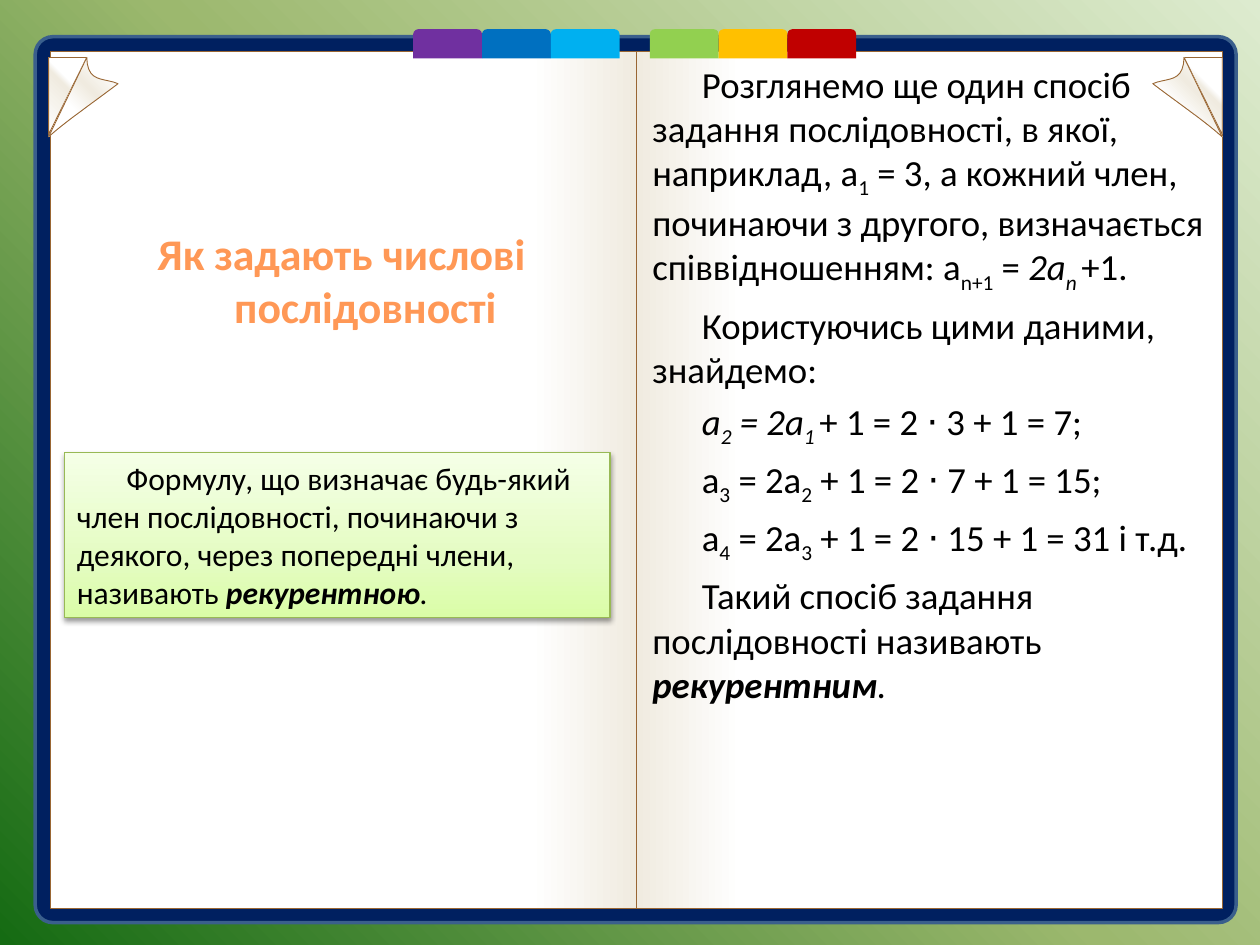
from lxml import etree
from pptx import Presentation
from pptx.dml.color import RGBColor
from pptx.enum.shapes import MSO_SHAPE
from pptx.enum.text import MSO_ANCHOR, PP_ALIGN
from pptx.oxml.ns import qn
from pptx.util import Cm, Pt

RECTANGLE = MSO_SHAPE.RECTANGLE
ROUNDED = MSO_SHAPE.ROUNDED_RECTANGLE
TAB = MSO_SHAPE.ROUND_2_SAME_RECTANGLE
TOP, MIDDLE = MSO_ANCHOR.TOP, MSO_ANCHOR.MIDDLE
LEFT, CENTER = PP_ALIGN.LEFT, PP_ALIGN.CENTER

COLORS = {
    "cover": "002060", "cover_edge": "3A5F8C", "paper": "FFFFFF",
    "paper_shade": "F0EBE0", "paper_edge": "996633", "text": "000000",
    "rule_edge": "98B955", "shadow": "000000",
}
TAB_COLORS = [["7030A0", "0070C0", "00B0F0"], ["92D050", "FFC000", "C00000"]]
PAPER, SHADE = COLORS["paper"], COLORS["paper_shade"]
BACKGROUND = [(0, "DDEBCF"), (50, "9CB86E"), (100, "156B13")]
PAGE_FILL = [(0, PAPER), (82, PAPER), (100, SHADE)]
UNDERSIDE_FILL = [(0, PAPER), (57, SHADE), (65, PAPER)]
CURL_FILL = [(12, PAPER), (40, SHADE), (65, PAPER)]
RULE_FILL = [(0, "DAFDA7"), (35, "E4FCC2"), (100, "F5FFE7")]
TITLE_FILL = [(0, "9D4700"), (78, "FF9856"), (100, "FFF5F1")]

SUB, ITALIC, ITALIC_SUB, STRONG = "sub", "italic", "italic sub", "bold italic"
STORY = [
    [("Розглянемо ще один спосіб задання послідовності, в якої, наприклад, а", ""),
     ("1", SUB),
     (" = 3, а кожний член, починаючи з другого, визначається співвідношенням: а", ""),
     ("n+1", SUB), (" = ", ""), ("2а", ITALIC), ("n ", ITALIC_SUB), ("+1.", "")],
    [("Користуючись цими даними, знайдемо:", "")],
    [("а", ITALIC), ("2", ITALIC_SUB), (" = 2а", ITALIC), ("1 ", ITALIC_SUB),
     ("+ 1 = 2 ⋅ 3 + 1 = 7;", "")],
    [("а", ""), ("3", SUB), (" = 2а", ""), ("2", SUB), (" + 1 = 2 ⋅ 7 + 1 = 15;", "")],
    [("а", ""), ("4", SUB), (" = 2а", ""), ("3", SUB),
     (" + 1 = 2 ⋅ 15 + 1 = 31 і т.д.", "")],
    [("Такий спосіб задання послідовності називають ", ""),
     ("рекурентним", STRONG), (".", ITALIC)],
]
RULE = [[
    ("Формулу, що визначає будь-який член послідовності, починаючи з деякого, "
     "через попередні члени, називають ", ""),
    ("рекурентною", STRONG), (".", ITALIC),
]]
TITLE = [[("Як задають числові послідовності", "bold")]]


def set_gradient(fill, element, stops, angle):
    """Fill with stops of (percent, colour); the angle runs clockwise."""
    fill.gradient()
    fill.gradient_angle = (360 - angle) % 360
    stop_list = element.find(".//" + qn("a:gsLst"))
    for old_stop in list(stop_list):
        stop_list.remove(old_stop)
    for percent, color in stops:
        stop = etree.SubElement(stop_list, qn("a:gs"), pos=str(percent * 1000))
        etree.SubElement(stop, qn("a:srgbClr"), val=color)


def paint(shape, fill, angle=0, edge=None, weight=0.5):
    shape.shadow.inherit = False
    if isinstance(fill, list):
        set_gradient(shape.fill, shape._element, fill, angle)
    else:
        shape.fill.solid()
        shape.fill.fore_color.rgb = RGBColor.from_string(fill)
    if edge:
        shape.line.color.rgb = RGBColor.from_string(COLORS[edge])
        shape.line.width = Pt(weight)
    else:
        shape.line.fill.background()


def add_box(page, kind, box, fill, **look):
    shape = page.shapes.add_shape(kind, *map(Cm, box))
    paint(shape, fill, **look)
    return shape


def write(frame, paragraphs, size, anchor=TOP, align=LEFT, space=0,
          margin=0, indent=1.0, gradient=None):
    frame.word_wrap = True
    frame.vertical_anchor = anchor
    for index, pieces in enumerate(paragraphs):
        para = frame.paragraphs[0] if index == 0 else frame.add_paragraph()
        para.alignment = align
        para.space_before = Pt(space)
        properties = para._p.get_or_add_pPr()
        properties.set("marL", str(Cm(margin)))
        properties.set("indent", str(Cm(indent)))
        for text, style in pieces:
            span = para.add_run()
            span.text = text
            values = {"name": "Calibri", "size": Pt(size),
                      "bold": "bold" in style, "italic": "italic" in style}
            for name, value in values.items():
                setattr(span.font, name, value)
            if gradient:
                set_gradient(span.font.fill, span._r, gradient, 90)
            else:
                span.font.color.rgb = RGBColor.from_string(COLORS["text"])
            if "sub" in style:
                span._r.get_or_add_rPr().set("baseline", "-25000")


def add_text(page, box, paragraphs, size, **layout):
    frame = page.shapes.add_textbox(*map(Cm, box)).text_frame
    write(frame, paragraphs, size, **layout)


def add_book(page, box):
    left, top, width, height = box
    cover = add_box(page, ROUNDED, box, COLORS["cover"], edge="cover_edge", weight=2)
    cover.adjustments[0] = 0.02
    leaf = 11.81
    for side, angle in enumerate((0, 180)):
        add_box(page, RECTANGLE, (left + 0.31 + side * leaf, top + 0.3, leaf, height - 0.59),
                PAGE_FILL, angle=angle, edge="paper_edge")


def curve(start, first, second, end, steps=10):
    """Points along a cubic curve, without its start."""
    points = []
    for step in range(1, steps + 1):
        t = step / steps
        weights = ((1 - t) ** 3, 3 * t * (1 - t) ** 2, 3 * t * t * (1 - t), t ** 3)
        points.append(tuple(sum(w * p[axis] for w, p in zip(weights, (start, first, second, end)))
                            for axis in (0, 1)))
    return points


UNDERSIDE = [(0.45, 0), (1, 0.97), (1, 0)]
CURL = [(0, 0.33),
        *curve((0, 0.33), (0.36, 0.57), (0.76, 0.81), (1, 1)),
        *curve((0.45, 0), (0.44, 0.32), (0.22, 0.25), (0, 0.33))]
CURL.insert(11, (0.45, 0))


def add_fold(page, box, outline, mirrored, fill, angle):
    """Draw an outline given in fractions of the box."""
    left, top, width, height = box
    points = [(Cm(left + width * (1 - x if mirrored else x)), Cm(top + height * y))
              for x, y in outline]
    builder = page.shapes.build_freeform(*points[0], scale=1.0)
    builder.add_line_segments(points[1:], close=True)
    paint(builder.convert_to_shape(), fill, angle, "paper_edge")


def add_tabs(page, box, colors):
    left, top, width, height = box
    step = width / len(colors)
    for index, color in enumerate(colors):
        add_box(page, TAB, (left + index * step, top, step, height), color)


def add_rule(page, box):
    shape = add_box(page, RECTANGLE, box, RULE_FILL, angle=270,
                    edge="rule_edge", weight=0.75)
    effects = shape._element.spPr.find(qn("a:effectLst"))
    shadow = etree.SubElement(effects, qn("a:outerShdw"), blurRad=str(Pt(3.1)),
                              dist=str(Pt(1.6)), dir="5400000", rotWithShape="0")
    color = etree.SubElement(shadow, qn("a:srgbClr"), val=COLORS["shadow"])
    etree.SubElement(color, qn("a:alpha"), val="38000")
    write(shape.text_frame, RULE, 18, anchor=MIDDLE)


def main():
    deck = Presentation()
    deck.slide_width, deck.slide_height = Cm(25.4), Cm(19.05)
    page = deck.slides.add_slide(deck.slide_layouts[6])
    set_gradient(page.background.fill, page._element, BACKGROUND, 135)

    corners = [((23.24, 1.16, 1.4, 1.6), False), ((0.98, 1.16, 1.4, 1.6), True)]
    add_book(page, (0.71, 0.74, 24.21, 17.86))
    for box, mirrored in corners:
        add_fold(page, box, UNDERSIDE, mirrored, UNDERSIDE_FILL, 315)
    add_text(page, (12.9, 1.12, 11.81, 17.2), STORY, 21, space=4.6)
    for left, colors in zip((8.33, 13.1), TAB_COLORS):
        add_tabs(page, (left, 0.59, 4.16, 0.59), colors)
    add_text(page, (1.27, 4.45, 11.23, 1.68), TITLE, 25, align=CENTER,
             margin=0.96, indent=-0.96, gradient=TITLE_FILL)
    for box, mirrored in corners:
        add_fold(page, box, CURL, mirrored, CURL_FILL, 135)
    add_rule(page, (1.3, 9.12, 11, 3.33))
    deck.save("out.pptx")


if __name__ == "__main__":
    main()
